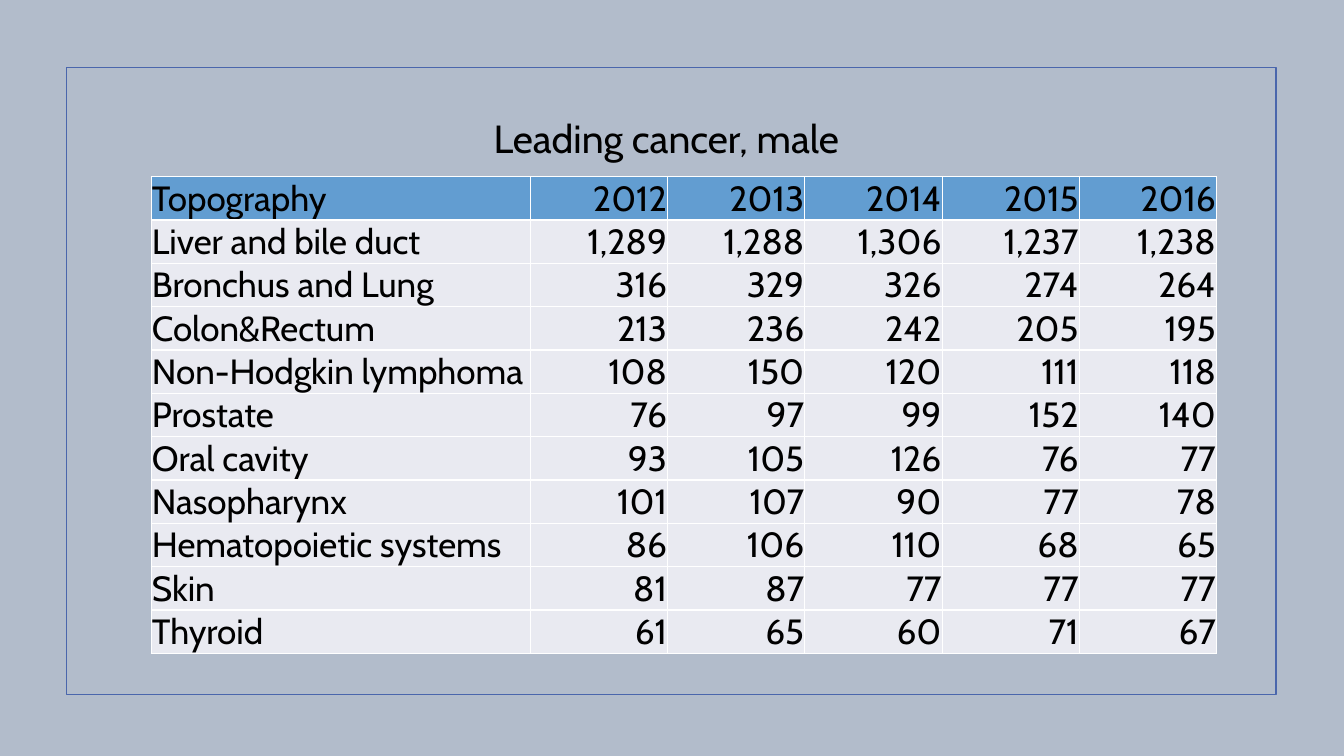
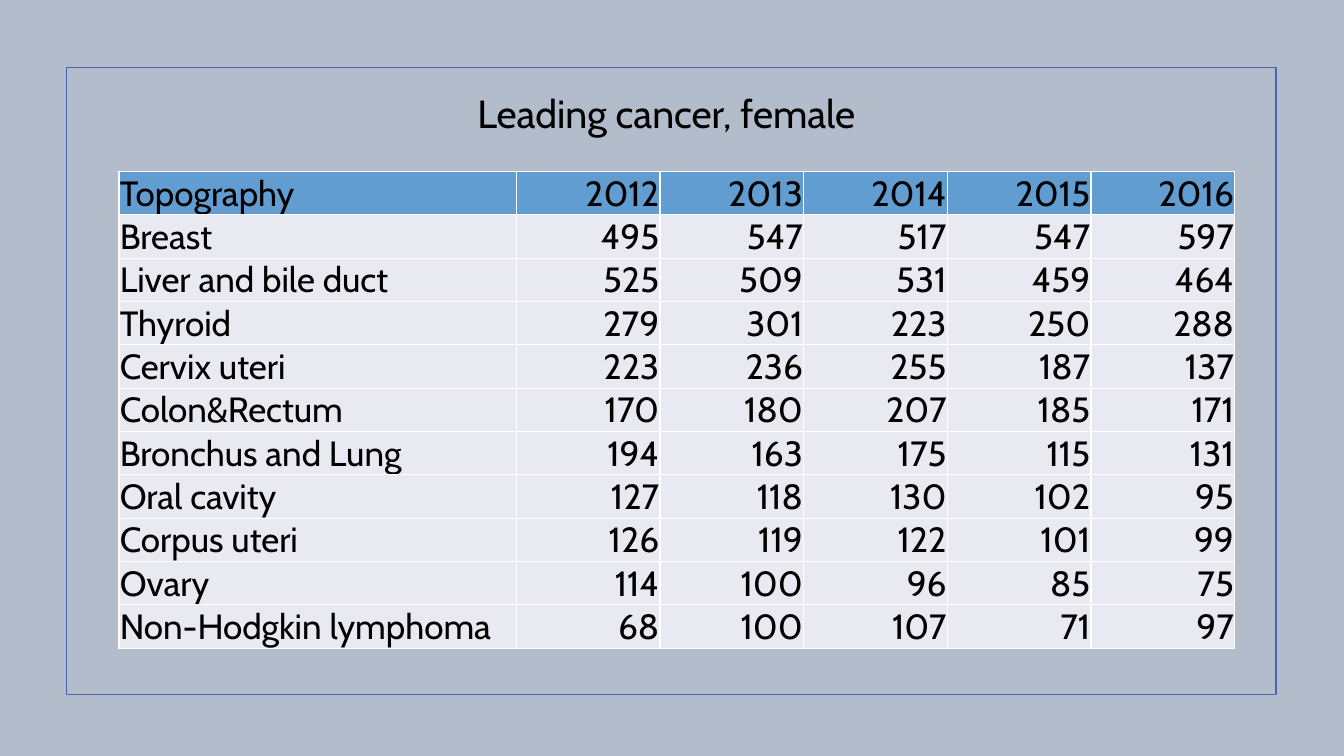
from lxml import etree
from pptx import Presentation
from pptx.dml.color import RGBColor
from pptx.enum.shapes import MSO_SHAPE as Shape
from pptx.enum.text import MSO_ANCHOR as Anchor, MSO_AUTO_SIZE as AutoSize, PP_ALIGN as Align
from pptx.oxml.ns import qn
from pptx.util import Cm, Pt

COLORS = {
    "background": "B2BCCB",
    "frame": "4A66AC",
    "header": "629DD1",
    "body": "E9EAF1",
    "border": "FFFFFF",
    "text": "000000",
}
FONT = "Cabin"
TITLE_ONLY = 5
FRAME_BOX = (1.68, 1.7, 30.48, 15.8)
TITLE_LEFT, TITLE_WIDTH, TITLE_HEIGHT = 11.1, 11.38, 1.45
ROW_HEIGHT = 1.08
LABEL_SHARE = 0.356
CELL_MARGIN = 0.02

HEADER = ("Topography", "2012", "2013", "2014", "2015", "2016")
MALE = (
    ("Liver and bile duct", "1,289", "1,288", "1,306", "1,237", "1,238"),
    ("Bronchus and Lung", "316", "329", "326", "274", "264"),
    ("Colon&Rectum", "213", "236", "242", "205", "195"),
    ("Non-Hodgkin lymphoma", "108", "150", "120", "111", "118"),
    ("Prostate", "76", "97", "99", "152", "140"),
    ("Oral cavity", "93", "105", "126", "76", "77"),
    ("Nasopharynx", "101", "107", "90", "77", "78"),
    ("Hematopoietic systems", "86", "106", "110", "68", "65"),
    ("Skin", "81", "87", "77", "77", "77"),
    ("Thyroid", "61", "65", "60", "71", "67"),
)
FEMALE = (
    ("Breast", "495", "547", "517", "547", "597"),
    ("Liver and bile duct", "525", "509", "531", "459", "464"),
    ("Thyroid", "279", "301", "223", "250", "288"),
    ("Cervix uteri", "223", "236", "255", "187", "137"),
    ("Colon&Rectum", "170", "180", "207", "185", "171"),
    ("Bronchus and Lung", "194", "163", "175", "115", "131"),
    ("Oral cavity", "127", "118", "130", "102", "95"),
    ("Corpus uteri", "126", "119", "122", "101", "99"),
    ("Ovary", "114", "100", "96", "85", "75"),
    ("Non-Hodgkin lymphoma", "68", "100", "107", "71", "97"),
)


def color(name):
    return RGBColor.from_string(COLORS[name])


def write(text_frame, text, size=25, align=Align.LEFT, ink="text"):
    paragraph = text_frame.paragraphs[0]
    paragraph.alignment = align
    run = paragraph.add_run()
    run.text = text
    run.font.name = FONT
    run.font.size = Pt(size)
    run.font.bold = False
    run.font.color.rgb = color(ink)


def add_frame(slide, box):
    frame = slide.shapes.add_shape(Shape.RECTANGLE, *map(Cm, box))
    frame.shadow.inherit = False
    frame.fill.background()
    frame.line.color.rgb = color("frame")
    frame.line.width = Pt(1.25)


def add_title(slide, text, box):
    title = slide.shapes.title
    title.left, title.top, title.width, title.height = map(Cm, box)
    title.text_frame.auto_size = AutoSize.NONE
    title.text_frame.vertical_anchor = Anchor.MIDDLE
    write(title.text_frame, text, size=28, align=Align.CENTER)


def add_borders(cell, width=1):
    properties = cell._tc.get_or_add_tcPr()
    for side in ("lnL", "lnR", "lnT", "lnB"):
        line = etree.SubElement(properties, qn(f"a:{side}"), w=str(Pt(width)))
        fill = etree.SubElement(line, qn("a:solidFill"))
        etree.SubElement(fill, qn("a:srgbClr"), val=COLORS["border"])


def fill_cell(cell, text, fill, align):
    add_borders(cell)
    cell.fill.solid()
    cell.fill.fore_color.rgb = color(fill)
    cell.vertical_anchor = Anchor.BOTTOM
    cell.margin_left = cell.margin_right = cell.margin_top = Cm(CELL_MARGIN)
    cell.margin_bottom = 0
    write(cell.text_frame, text, align=align)


def add_case_table(slide, cases, left, top, width):
    rows = (HEADER, *cases)
    table = slide.shapes.add_table(
        len(rows), len(HEADER), Cm(left), Cm(top), Cm(width), Cm(ROW_HEIGHT * len(rows))
    ).table
    table.first_row = table.horz_banding = False
    label_width = width * LABEL_SHARE
    year_width = (width - label_width) / (len(HEADER) - 1)
    for index, column in enumerate(table.columns):
        column.width = Cm(year_width if index else label_width)
    for row_index, row in enumerate(rows):
        table.rows[row_index].height = Cm(ROW_HEIGHT)
        for column_index, text in enumerate(row):
            fill_cell(
                table.cell(row_index, column_index),
                text,
                fill="body" if row_index else "header",
                align=Align.RIGHT if column_index else Align.LEFT,
            )


def add_cancer_slide(prs, title, title_top, cases, left, top, width):
    slide = prs.slides.add_slide(prs.slide_layouts[TITLE_ONLY])
    add_frame(slide, FRAME_BOX)
    add_title(slide, title, (TITLE_LEFT, title_top, TITLE_WIDTH, TITLE_HEIGHT))
    add_case_table(slide, cases, left, top, width)


def main():
    prs = Presentation()
    prs.slide_width, prs.slide_height = Cm(33.87), Cm(19.05)
    background = prs.slide_master.background.fill
    background.solid()
    background.fore_color.rgb = color("background")
    add_cancer_slide(prs, "Leading cancer, male", 2.74, MALE, left=3.81, top=4.45, width=26.85)
    add_cancer_slide(prs, "Leading cancer, female", 2.11, FEMALE, left=3, top=4.32, width=28.12)
    prs.save("out.pptx")


if __name__ == "__main__":
    main()
